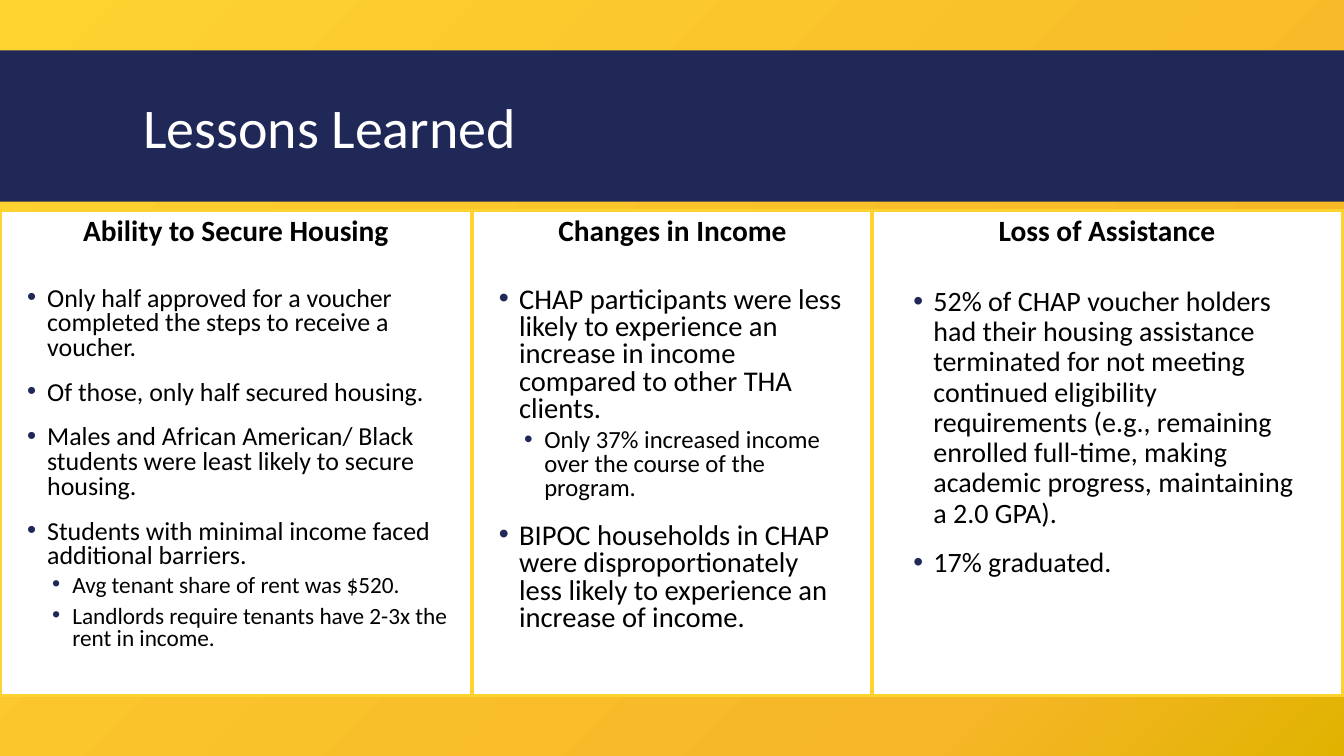
"""Builds the Lessons Learned slide with three bordered columns."""
from lxml.etree import SubElement
from pptx import Presentation
from pptx.dml.color import RGBColor
from pptx.enum.shapes import MSO_SHAPE
from pptx.enum.text import MSO_ANCHOR, PP_ALIGN
from pptx.oxml import parse_xml
from pptx.oxml.ns import nsdecls, qn
from pptx.util import Inches, Pt

NAVY = RGBColor(0x20, 0x28, 0x58)
GOLD = RGBColor(0xFE, 0xD3, 0x30)
AMBER = RGBColor(0xF6, 0xB6, 0x27)
OCHRE = RGBColor(0xE1, 0xB3, 0x01)
WHITE = RGBColor(0xFF, 0xFF, 0xFF)
BLACK = RGBColor(0, 0, 0)
WIDTH, TOP, HEIGHT = 13.33, 2.09, 4.81

COLUMNS = [
    ("Ability to Secure Housing", 0, 4.68, 0.17, 4.36, 0.8, (18.5, 16.6), [
        (0, "Only half approved for a voucher completed the steps to receive a voucher."),
        (0, "Of those, only half secured housing."),
        (0, "Males and African American/ Black students were least likely to secure housing."),
        (0, "Students with minimal income faced additional barriers."),
        (1, "Avg tenant share of rent was $520."),
        (1, "Landlords require tenants have 2-3x the rent in income."),
    ]),
    ("Changes in Income", 4.69, 3.96, 4.85, 3.61, 0.8, (20.4, 17.6), [
        (0, "CHAP participants were less likely to experience an increase in income "
            "compared to other THA clients."),
        (1, "Only 37% increased income over the course of the program."),
        (0, "BIPOC households in CHAP were disproportionately less likely to experience "
            "an increase of income."),
    ]),
    ("Loss of Assistance", 8.64, 4.68, 8.96, 4.04, 0.9, (20, 20), [
        (0, "52% of CHAP voucher holders had their housing assistance terminated for not "
            "meeting continued eligibility requirements (e.g., remaining enrolled full-time, "
            "making academic progress, maintaining a 2.0 GPA)."),
        (0, "17% graduated."),
    ]),
]


def add_rect(x, y, w, h):
    sp = s.shapes.add_shape(MSO_SHAPE.RECTANGLE, Inches(x), Inches(y), Inches(w), Inches(h))
    sp.shadow.inherit = False
    return sp


def add_run(p, text, size, color, bold=False):
    r = p.add_run()
    r.text = text
    r.font.name = "Calibri"
    r.font.size = Pt(size)
    r.font.bold = bold
    r.font.color.rgb = color


prs = Presentation()
prs.slide_width, prs.slide_height = Inches(WIDTH), Inches(7.5)
s = prs.slides.add_slide(prs.slide_layouts[5])

fill = s.background.fill
fill.gradient()
grad = s.background._cSld.find(".//" + qn("a:gradFill"))
stops = "".join(f'<a:gs pos="{pos}000"><a:srgbClr val="{color}"/></a:gs>'
                for pos, color in ((0, GOLD), (80, AMBER), (100, OCHRE)))
grad.getparent().replace(grad, parse_xml(
    f'<a:gradFill {nsdecls("a")} rotWithShape="1"><a:gsLst>{stops}</a:gsLst>'
    '<a:path path="circle"><a:fillToRect r="100000" b="100000"/></a:path></a:gradFill>'))

for y, h, color in ((2.1, 4.8, WHITE), (0.5, 1.5, NAVY)):
    band = add_rect(0, y, WIDTH, h)
    band.fill.solid()
    band.fill.fore_color.rgb = color
    band.line.fill.background()

title = s.shapes.title
s.shapes._spTree.append(title._element)
title.left, title.top, title.width, title.height = (Inches(v) for v in (1.32, 0.6, 10.7, 1.4))
title.text_frame.vertical_anchor = MSO_ANCHOR.MIDDLE
p = title.text_frame.paragraphs[0]
p.alignment = PP_ALIGN.LEFT
p.line_spacing = 0.85
add_run(p, "Lessons Learned", 40, WHITE)

for heading, x, w, text_x, text_w, spacing, sizes, points in COLUMNS:
    frame = add_rect(x, TOP, w, HEIGHT)
    frame.fill.background()
    frame.line.color.rgb = GOLD
    frame.line.width = Pt(2.25)
    frame.text_frame.vertical_anchor = MSO_ANCHOR.TOP
    p = frame.text_frame.paragraphs[0]
    p.alignment = PP_ALIGN.CENTER
    p.line_spacing = 0.9
    add_run(p, heading, 21, BLACK, bold=True)

    box = s.shapes.add_textbox(Inches(text_x), Inches(2.8), Inches(text_w), Inches(3.9))
    tf = box.text_frame
    tf.word_wrap = True
    for i, (level, text) in enumerate(points):
        p = tf.add_paragraph() if i else tf.paragraphs[0]
        p.level = level
        p.line_spacing = spacing
        p.space_before = Pt((12, 2)[level] if i else 0)
        p.space_after = Pt((2, 4)[level])
        pPr = p._p.get_or_add_pPr()
        pPr.set("marL", str(Inches(0.2 + 0.25 * level)))
        pPr.set("indent", str(Inches(-0.2)))
        SubElement(SubElement(pPr, qn("a:buClr")), qn("a:srgbClr")).set("val", str(NAVY))
        SubElement(pPr, qn("a:buFont")).set("typeface", "Arial")
        SubElement(pPr, qn("a:buChar")).set("char", "•")
        add_run(p, text, sizes[level], BLACK)

prs.save("out.pptx")
